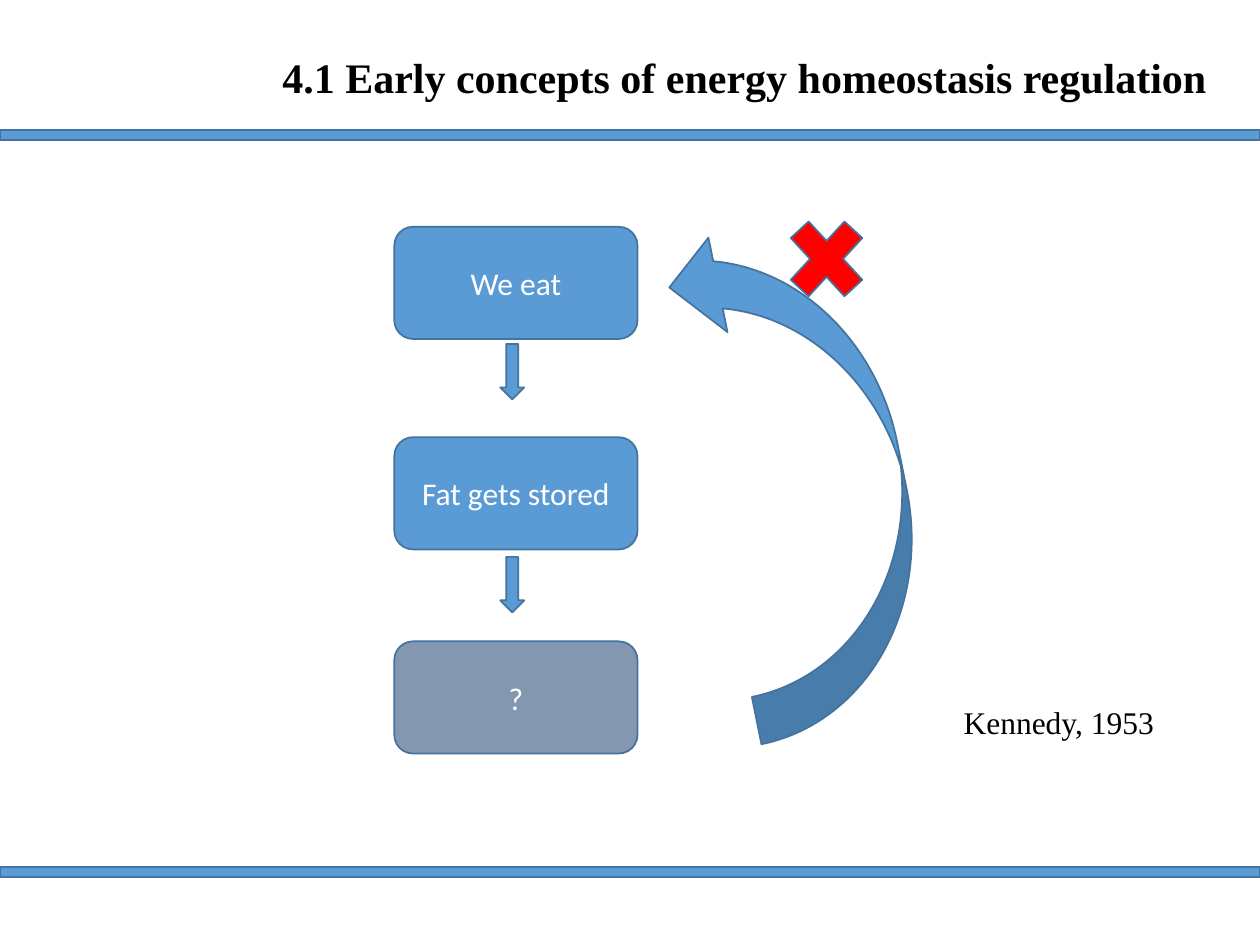
from dataclasses import dataclass

from pptx import Presentation
from pptx.dml.color import RGBColor
from pptx.enum.shapes import MSO_SHAPE
from pptx.enum.text import MSO_ANCHOR, MSO_AUTO_SIZE, PP_ALIGN
from pptx.util import Inches, Pt

RECT = MSO_SHAPE.RECTANGLE
ROUNDED = MSO_SHAPE.ROUNDED_RECTANGLE
DOWN_ARROW = MSO_SHAPE.DOWN_ARROW
CURVED_ARROW = MSO_SHAPE.CURVED_UP_ARROW
CROSS = MSO_SHAPE.MATH_MULTIPLY
MIDDLE = MSO_ANCHOR.MIDDLE
NO_FIT = MSO_AUTO_SIZE.NONE
LEFT = PP_ALIGN.LEFT
CENTER = PP_ALIGN.CENTER

BLUE = RGBColor(0x5B, 0x9B, 0xD5)
EDGE = RGBColor(0x43, 0x73, 0x9E)
SLATE = RGBColor(0x84, 0x97, 0xB0)
RED = RGBColor(0xFF, 0x00, 0x00)
WHITE = RGBColor(0xFF, 0xFF, 0xFF)
BLACK = RGBColor(0x00, 0x00, 0x00)
SANS = "Calibri"
SERIF = "Times New Roman"


@dataclass
class Block:
    kind: MSO_SHAPE
    left: float
    top: float
    width: float
    height: float
    fill: RGBColor = BLUE
    text: str = ""
    rotation: float = 0


BLOCKS = [
    *(Block(RECT, 0, top, 10, 0.08) for top in (1.03, 6.88)),
    *(
        Block(ROUNDED, 3.13, top, 1.93, 0.89, fill, text)
        for top, fill, text in (
            (1.8, BLUE, "We eat"),
            (3.47, BLUE, "Fat gets stored"),
            (5.09, SLATE, "?"),
        )
    ),
    *(Block(DOWN_ARROW, 3.97, top, 0.19, 0.44) for top in (2.73, 4.42)),
    Block(CURVED_ARROW, 4.35, 2.99, 4.08, 1.53, rotation=258.6),
    Block(CROSS, 6.15, 1.61, 0.82, 0.89, RED),
]


def set_text(sp, text: str, font: str, size: int, color: RGBColor,
             align: PP_ALIGN = LEFT, bold: bool = False) -> None:
    tf = sp.text_frame
    tf.text = text
    p = tf.paragraphs[0]
    p.alignment = align
    r = p.runs[0]
    r.font.name = font
    r.font.size = Pt(size)
    r.font.bold = bold
    r.font.color.rgb = color


def place(sp, left: float, top: float, width: float, height: float) -> None:
    sp.left, sp.top = Inches(left), Inches(top)
    sp.width, sp.height = Inches(width), Inches(height)


def draw_block(slide, block: Block) -> None:
    sp = slide.shapes.add_shape(
        block.kind, Inches(block.left), Inches(block.top),
        Inches(block.width), Inches(block.height))
    sp.rotation = block.rotation
    sp.shadow.inherit = False
    sp.fill.solid()
    sp.fill.fore_color.rgb = block.fill
    sp.line.color.rgb = EDGE
    sp.line.width = Pt(1)
    if block.text:
        set_text(sp, block.text, SANS, 18, WHITE, CENTER)
        sp.text_frame.vertical_anchor = MIDDLE


def main() -> None:
    prs = Presentation()
    prs.slide_width, prs.slide_height = Inches(10), Inches(7.5)
    slide = prs.slides.add_slide(prs.slide_layouts[5])

    title = slide.shapes.title
    place(title, 2.14, -0.18, 7.86, 1.45)
    set_text(title, "4.1 Early concepts of energy homeostasis regulation",
             SERIF, 24, BLACK, bold=True)
    title.text_frame.paragraphs[0].line_spacing = 1.3
    title.text_frame.vertical_anchor = MIDDLE
    title.text_frame.auto_size = NO_FIT

    for block in BLOCKS:
        draw_block(slide, block)

    citation = slide.shapes.add_textbox(
        Inches(7.55), Inches(5.53), Inches(1.84), Inches(0.4))
    set_text(citation, "Kennedy, 1953", SERIF, 18, BLACK)

    prs.save("out.pptx")


if __name__ == "__main__":
    main()
